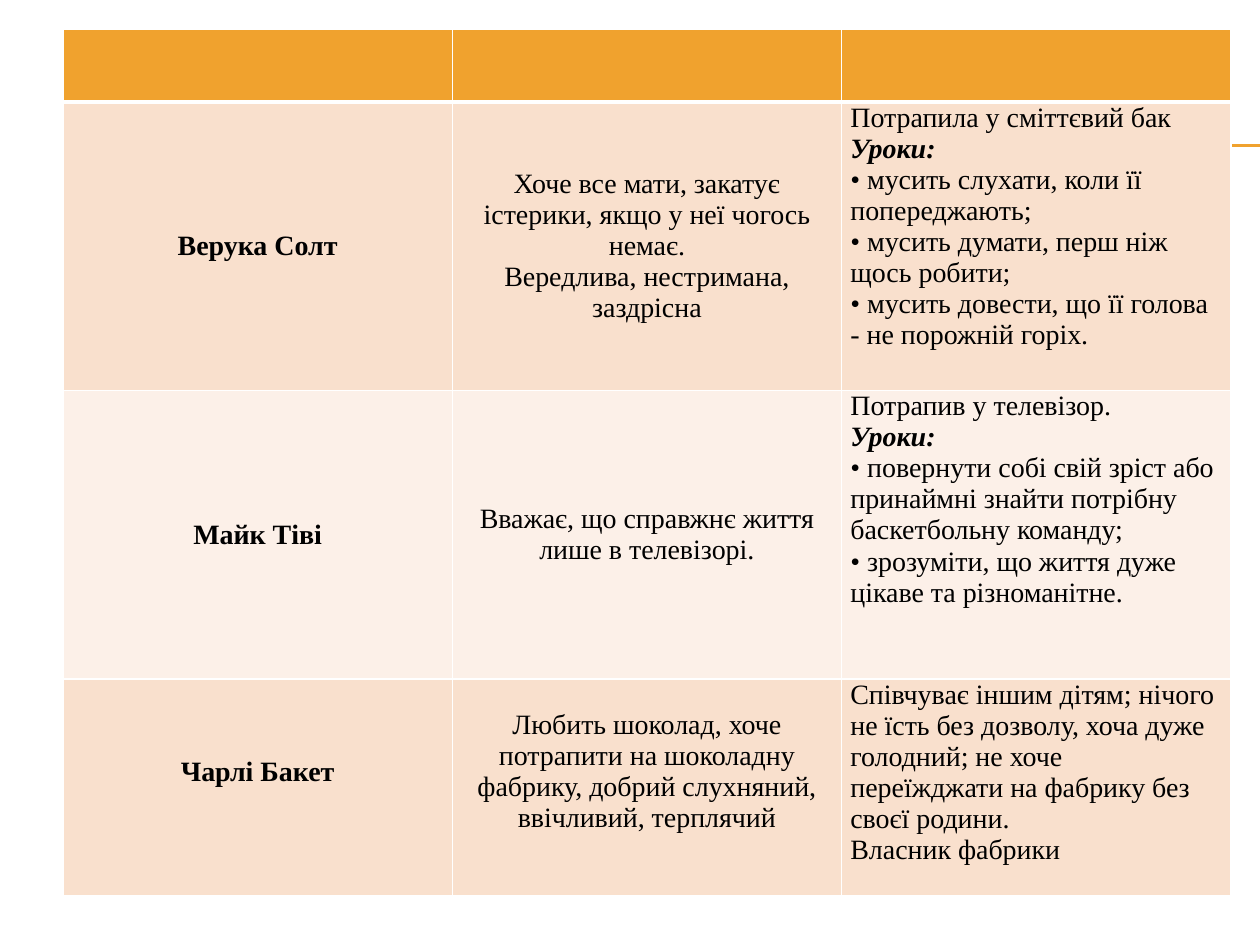
from dataclasses import dataclass
from lxml.etree import SubElement as Sub
from pptx import Presentation
from pptx.dml.color import RGBColor as Rgb
from pptx.enum.shapes import MSO_CONNECTOR as Conn
from pptx.enum.text import MSO_ANCHOR as Anchor, PP_ALIGN as Align
from pptx.oxml.ns import qn
from pptx.util import Inches, Pt


@dataclass(frozen=True)
class Theme:
    head: str = "F0A22E"
    odd: str = "F9E0CD"
    even: str = "FCF0E8"
    edge: str = "FFFFFF"
    ink: str = "000000"
    font: str = "Times New Roman"
    size: int = 16
    thin: float = 1
    thick: float = 3
    rule: float = 0.75


class Deck:
    """Holds the theme and the slide; lengths are cells of a 100 by 75 grid."""

    def __init__(self, theme):
        self.theme = theme
        self.file = Presentation()
        self.file.slide_width, self.file.slide_height = Inches(10), Inches(7.5)
        self.unit = self.file.slide_width / 100
        self.slide = self.file.slides.add_slide(self.file.slide_layouts[6])

    def span(self, *cells):
        return [round(n * self.unit) for n in cells]

    def line(self, x, y, end):
        rule = self.slide.shapes.add_connector(
            Conn.STRAIGHT, *self.span(x, y, end, y))
        rule.line.color.rgb = Rgb.from_string(self.theme.head)
        rule.line.width = Pt(self.theme.rule)
        Sub(rule._element.spPr, qn("a:effectLst"))

    def table(self, x, y, cols, rows):
        frame = self.slide.shapes.add_table(
            len(rows), len(cols), *self.span(x, y, sum(cols), sum(rows)))
        grid = frame.table
        grid.first_row = grid.horz_banding = False
        for col, wide in zip(grid.columns, self.span(*cols)):
            col.width = wide
        for row, high in zip(grid.rows, self.span(*rows)):
            row.height = high
        return grid

    def paint(self, cell, fill, **wide):
        # Borders come before the fill in the cell's properties
        props = cell._tc.get_or_add_tcPr()
        for side in "LRTB":
            width = Pt(wide.get(side, self.theme.thin))
            edge = Sub(props, qn(f"a:ln{side}"), w=str(width))
            Sub(Sub(edge, qn("a:solidFill")), qn("a:srgbClr"),
                val=self.theme.edge)
        cell.fill.solid()
        cell.fill.fore_color.rgb = Rgb.from_string(fill)

    def text(self, cell, paras, mid=True, bold=False, foot=0):
        cell.margin_left = cell.margin_right = Inches(0.07)
        cell.margin_top, cell.margin_bottom = 0, Inches(foot)
        cell.vertical_anchor = Anchor.MIDDLE if mid else Anchor.TOP
        frame = cell.text_frame
        for i, words in enumerate(paras):
            para = frame.add_paragraph() if i else frame.paragraphs[0]
            para.alignment = Align.CENTER if mid else Align.LEFT
            run = para.add_run()
            run.text = words
            font = run.font
            font.name, font.size = self.theme.font, Pt(self.theme.size)
            font.color.rgb = Rgb.from_string(self.theme.ink)
            font.italic = words == LESSON
            font.bold = bold or words == LESSON


LESSON = "Уроки:"

# Each hero: name, traits, fate, space kept below the centred text
HEROES = [
    ("Верука Солт",
     ["Хоче все мати, закатує істерики, якщо у неї чогось немає.",
      "Вередлива, нестримана, заздрісна"],
     ["Потрапила у сміттєвий бак",
      LESSON,
      "• мусить слухати, коли її попереджають;",
      "• мусить думати, перш ніж щось робити;",
      "• мусить довести, що її голова - не порожній горіх."], 0),
    ("Майк Тіві",
     ["Вважає, що справжнє життя лише в телевізорі."],
     ["Потрапив у телевізор.",
      LESSON,
      "• повернути собі свій зріст або принаймні знайти потрібну "
      "баскетбольну команду;",
      "• зрозуміти, що життя дуже цікаве та різноманітне."], 0),
    ("Чарлі Бакет",
     ["Любить шоколад, хоче потрапити на шоколадну фабрику, "
      "добрий слухняний,",
      "ввічливий, терплячий"],
     ["Співчуває іншим дітям; нічого не їсть без дозволу, хоча дуже "
      "голодний; не хоче переїжджати на фабрику без своєї родини.",
      "Власник фабрики"], 0.25),
]


def main():
    theme = Theme()
    deck = Deck(theme)

    # Double rule behind the table
    for y in (11.5, 11.6):
        deck.line(5.6, y, 100)

    # Empty header row
    grid = deck.table(5, 2.3, [30.9] * 3, [5.8, 22.9, 22.9, 17.2])
    for cell in grid.rows[0].cells:
        deck.paint(cell, theme.head, B=theme.thick)

    # One row for each hero
    for i, (name, traits, fate, foot) in enumerate(HEROES, 1):
        cells = list(grid.rows[i].cells)
        top = theme.thick if i == 1 else theme.thin
        for cell in cells:
            deck.paint(cell, theme.odd if i % 2 else theme.even, T=top)
        deck.text(cells[0], [name], bold=True, foot=foot)
        deck.text(cells[1], traits, foot=foot)
        deck.text(cells[2], fate, mid=False)

    deck.file.save("out.pptx")


if __name__ == "__main__":
    main()
